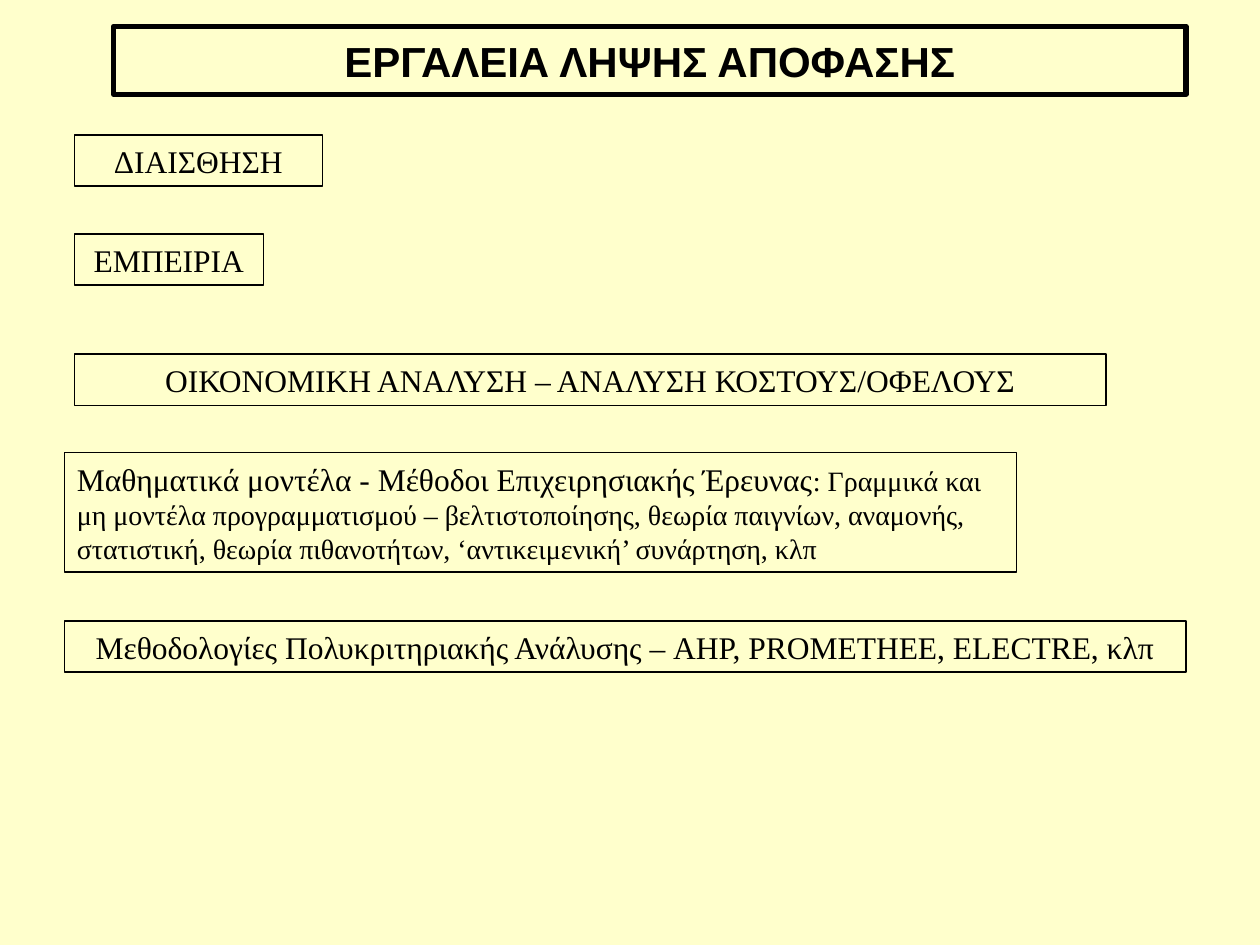
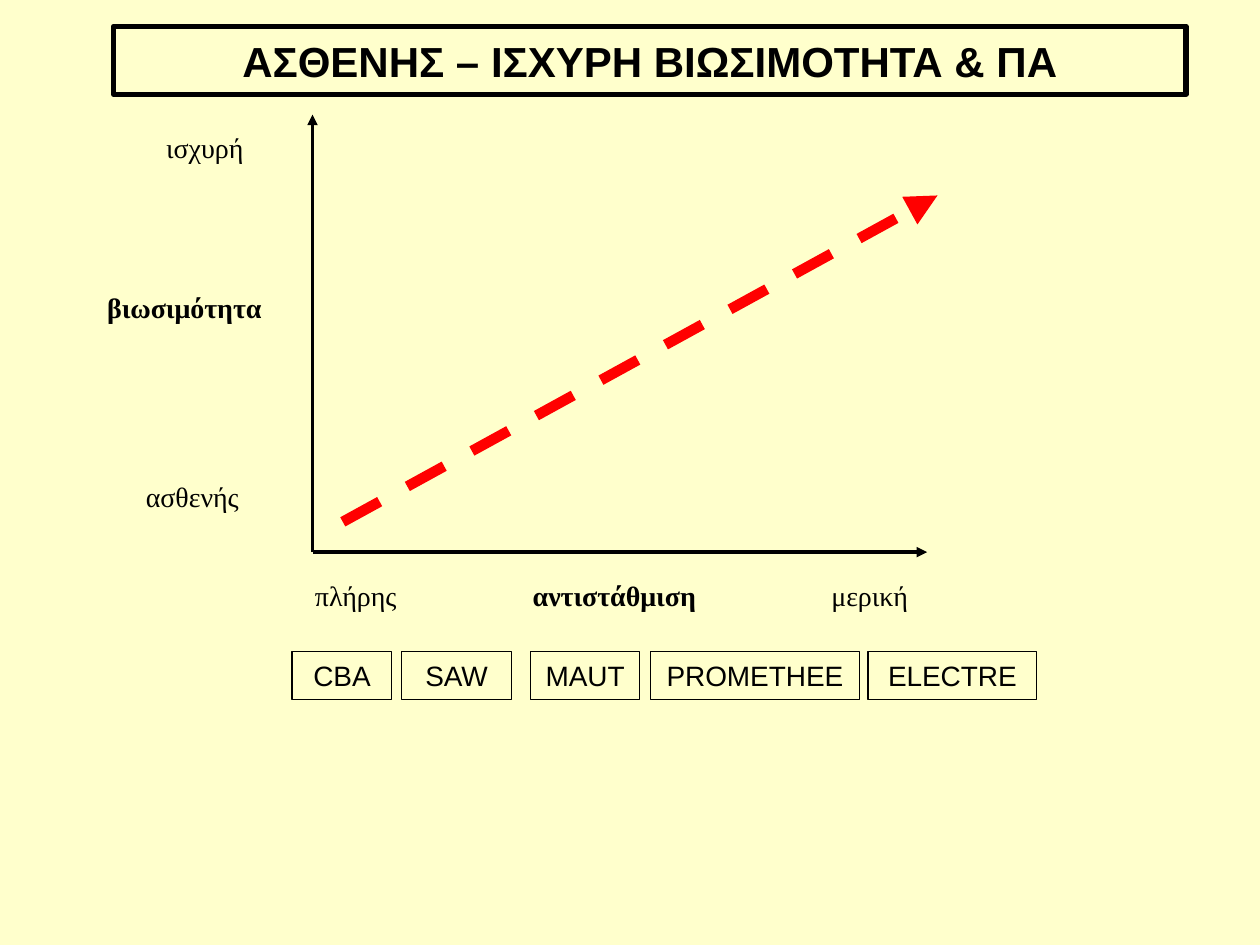
from lxml.etree import SubElement
from pptx import Presentation
from pptx.dml.color import RGBColor
from pptx.enum.dml import MSO_LINE_DASH_STYLE as Dash
from pptx.enum.shapes import MSO_CONNECTOR as Connector, MSO_SHAPE as Shape
from pptx.enum.text import MSO_ANCHOR as Anchor, MSO_AUTO_SIZE as AutoSize, PP_ALIGN as Align
from pptx.oxml.ns import qn
from pptx.util import Cm, Pt

CREAM, BLACK, RED = "FFFFCC", "000000", "FF0000"
SANS, SERIF = "Arial", "Times New Roman"


def paint(color_format, color):
    color_format.rgb = RGBColor.from_string(color)


def outline(line, width, color=BLACK):
    line.width = Pt(width)
    line.fill.solid()
    paint(line.fill.fore_color, color)


def write(box, text, size, font=SERIF, bold=False, align=Align.LEFT):
    frame = box.text_frame
    frame.word_wrap = True
    frame.auto_size = AutoSize.NONE
    frame.vertical_anchor = Anchor.MIDDLE
    para = frame.paragraphs[0]
    para.text = text
    para.alignment = align
    para.font.name, para.font.size, para.font.bold = font, Pt(size), bold
    paint(para.font.color, BLACK)
    return para


def add_titled_page(deck, title):
    page = deck.slides.add_slide(deck.slide_layouts[5])
    box = page.shapes.title
    box.left, box.top, box.width, box.height = Cm(2.29), Cm(0.53), Cm(21.62), Cm(1.37)
    outline(box.line, 3)
    write(box, title, 24, SANS, bold=True, align=Align.CENTER)
    return page


def add_framed_text(page, place, text, size=18, font=SERIF, align=Align.CENTER):
    box = page.shapes.add_shape(Shape.RECTANGLE, *map(Cm, place))
    box.shadow.inherit = False
    box.fill.background()
    outline(box.line, 0.75)
    return write(box, text, size, font, align=align)


def add_label(page, left, top, width, text, bold=False):
    box = page.shapes.add_textbox(Cm(left), Cm(top), Cm(width), Cm(0.94))
    write(box, text, 16, bold=bold)


def add_arrow(page, start, end, width, color=BLACK, dash=None):
    arrow = page.shapes.add_connector(Connector.STRAIGHT, *map(Cm, (*start, *end)))
    outline(arrow.line, width, color)
    if dash:
        arrow.line.dash_style = dash
    SubElement(arrow.line._get_or_add_ln(), qn("a:tailEnd"), type="triangle")
    SubElement(arrow._element.spPr, qn("a:effectLst"))


def add_tools_page(deck):
    page = add_titled_page(deck, "ΕΡΓΑΛΕΙΑ ΛΗΨΗΣ ΑΠΟΦΑΣΗΣ")
    for left, top, width, tool in (
        (1.5, 2.72, 5, "ΔΙΑΙΣΘΗΣΗ"),
        (1.5, 4.72, 3.81, "ΕΜΠΕΙΡΙΑ"),
        (1.5, 7.14, 20.8, "ΟΙΚΟΝΟΜΙΚΗ ΑΝΑΛΥΣΗ – ΑΝΑΛΥΣΗ ΚΟΣΤΟΥΣ/ΟΦΕΛΟΥΣ"),
        (1.3, 12.52, 22.61,
         "Μεθοδολογίες Πολυκριτηριακής Ανάλυσης – AHP, PROMETHEE, ELECTRE, κλπ"),
    ):
        add_framed_text(page, (left, top, width, 1.03), tool)

    models = add_framed_text(
        page, (1.3, 9.12, 19.2, 2.41),
        "Μαθηματικά μοντέλα - Μέθοδοι Επιχειρησιακής Έρευνας", align=Align.LEFT)
    examples = models.add_run()
    examples.text = (": Γραμμικά και μη μοντέλα προγραμματισμού – βελτιστοποίησης, "
                     "θεωρία παιγνίων, αναμονής, στατιστική, θεωρία πιθανοτήτων, "
                     "‘αντικειμενική’ συνάρτηση, κλπ")
    examples.font.size = Pt(16)


def add_sustainability_page(deck):
    page = add_titled_page(deck, "ΑΣΘΕΝΗΣ – ΙΣΧΥΡΗ ΒΙΩΣΙΜΟΤΗΤΑ & ΠΑ")
    origin = (6.3, 11.13)
    add_arrow(page, origin, (18.69, origin[1]), 2)
    add_arrow(page, origin, (origin[0], 2.31), 2)

    for left, text, bold in ((6.1, "πλήρης", False), (10.49, "αντιστάθμιση", True),
                             (16.51, "μερική", False)):
        add_label(page, left, 11.53, 3.99, text, bold)
    add_label(page, 3.1, 2.51, 2.59, "ισχυρή")
    add_label(page, 1.91, 5.72, 3.81, "βιωσιμότητα", bold=True)
    add_label(page, 2.69, 9.53, 2.79, "ασθενής")

    add_arrow(page, (6.91, 10.52), (18.9, 3.94), 6, RED, Dash.DASH)

    for left, width, method in ((5.89, 2.01, "CBA"), (8.1, 2.21, "SAW"), (10.69, 2.21, "MAUT"),
                                (13.11, 4.22, "PROMETHEE"), (17.5, 3.4, "ELECTRE")):
        add_framed_text(page, (left, 13.13, width, 0.97), method, 16, SANS)


def main():
    deck = Presentation()
    deck.slide_width, deck.slide_height = Cm(25.4), Cm(19.05)
    backdrop = deck.slide_master.background.fill
    backdrop.solid()
    paint(backdrop.fore_color, CREAM)
    add_tools_page(deck)
    add_sustainability_page(deck)
    deck.save("out.pptx")


if __name__ == "__main__":
    main()
